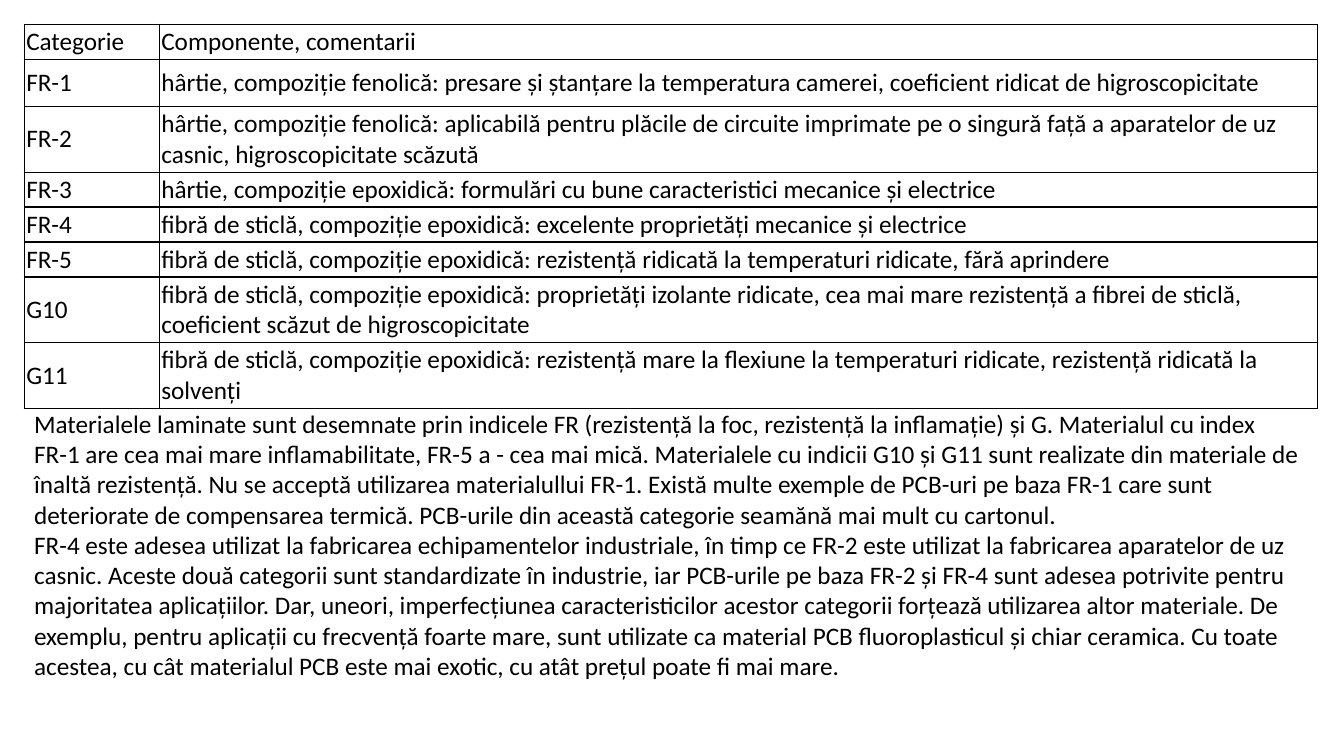
from dataclasses import dataclass

from lxml import etree
from pptx import Presentation
from pptx.dml.color import RGBColor
from pptx.enum import text
from pptx.oxml import ns
from pptx.util import Pt


@dataclass(frozen=True)
class Theme:
    """Colours, font and sizes of the slide."""
    ink: str = "000000"
    font: str = "Calibri"
    body: int = 18
    border: int = 1
    inset: float = 1.5


THEME = Theme()
ONE_LINE, TWO_LINES = 18.72, 33.84
LEFT, TOP, WIDTH = 17.28, 17.28, 923.76
TABLE_HEIGHT, NOTES_HEIGHT = 270.72, 203.76
CATEGORY_WIDTH = 96.48

GRADES = [
    ("Categorie", "Componente, comentarii", ONE_LINE),
    ("FR-1", "hârtie, compoziție fenolică: presare și ștanțare la temperatura camerei, "
     "coeficient ridicat de higroscopicitate", TWO_LINES),
    ("FR-2", "hârtie, compoziție fenolică: aplicabilă pentru plăcile de circuite imprimate "
     "pe o singură față a aparatelor de uz casnic, higroscopicitate scăzută", TWO_LINES),
    ("FR-3", "hârtie, compoziție epoxidică: formulări cu bune caracteristici mecanice "
     "și electrice", ONE_LINE),
    ("FR-4", "fibră de sticlă, compoziție epoxidică: excelente proprietăți mecanice "
     "și electrice", ONE_LINE),
    ("FR-5", "fibră de sticlă, compoziție epoxidică: rezistență ridicată la temperaturi "
     "ridicate, fără aprindere", ONE_LINE),
    ("G10", "fibră de sticlă, compoziție epoxidică: proprietăți izolante ridicate, cea mai "
     "mare rezistență a fibrei de sticlă, coeficient scăzut de higroscopicitate", TWO_LINES),
    ("G11", "fibră de sticlă, compoziție epoxidică: rezistență mare la flexiune la "
     "temperaturi ridicate, rezistență ridicată la solvenți", TWO_LINES),
]

NOTES = [
    "Materialele laminate sunt desemnate prin indicele FR (rezistență la foc, rezistență la "
    "inflamație) și G. Materialul cu index FR-1 are cea mai mare inflamabilitate, FR-5 a - cea "
    "mai mică. Materialele cu indicii G10 și G11 sunt realizate din materiale de înaltă "
    "rezistență. Nu se acceptă utilizarea materialullui FR-1. Există multe exemple de PCB-uri "
    "pe baza FR-1 care sunt deteriorate de compensarea termică. PCB-urile din această "
    "categorie seamănă mai mult cu cartonul.",
    "FR-4 este adesea utilizat la fabricarea echipamentelor industriale, în timp ce FR-2 este "
    "utilizat la fabricarea aparatelor de uz casnic. Aceste două categorii sunt standardizate "
    "în industrie, iar PCB-urile pe baza FR-2 și FR-4 sunt adesea potrivite pentru majoritatea "
    "aplicațiilor. Dar, uneori, imperfecțiunea caracteristicilor acestor categorii forțează "
    "utilizarea altor materiale. De exemplu, pentru aplicații cu frecvență foarte mare, sunt "
    "utilizate ca material PCB fluoroplasticul și chiar ceramica. Cu toate acestea, cu cât "
    "materialul PCB este mai exotic, cu atât prețul poate fi mai mare.",
]


def write(frame, wording):
    """Fill a text frame and give its runs the theme's font."""
    frame.text = wording
    for paragraph in frame.paragraphs:
        for run in paragraph.runs:
            run.font.name = THEME.font
            run.font.size = Pt(THEME.body)
            run.font.color.rgb = RGBColor.from_string(THEME.ink)


def outline(cell):
    """Draw a solid line on all four sides of a cell."""
    properties = cell._tc.get_or_add_tcPr()
    for side in ("lnL", "lnR", "lnT", "lnB"):
        line = etree.SubElement(properties, ns.qn(f"a:{side}"), w=str(Pt(THEME.border)))
        fill = etree.SubElement(line, ns.qn("a:solidFill"))
        etree.SubElement(fill, ns.qn("a:srgbClr"), val=THEME.ink)


def add_grades(slide, left, top, width, height):
    """Place the table of laminate grades in the given box."""
    frame = slide.shapes.add_table(len(GRADES), 2, Pt(left), Pt(top), Pt(width), Pt(height))
    grades = frame.table
    grades.first_row = grades.horz_banding = False
    grades.columns[0].width = Pt(CATEGORY_WIDTH)
    grades.columns[1].width = Pt(width - CATEGORY_WIDTH)
    for row, (category, comment, row_height) in zip(grades.rows, GRADES):
        row.height = Pt(row_height)
        for cell, wording in zip(row.cells, (category, comment)):
            write(cell.text_frame, wording)
            cell.vertical_anchor = text.MSO_ANCHOR.MIDDLE
            cell.margin_left = cell.margin_right = Pt(THEME.inset)
            cell.margin_top = cell.margin_bottom = Pt(THEME.inset)
            outline(cell)
            cell.fill.background()
    frame.height = Pt(height)


def add_notes(slide, left, top, width, height):
    """Place the explanatory paragraphs in the given box."""
    notes = slide.shapes.add_textbox(Pt(left), Pt(top), Pt(width), Pt(height)).text_frame
    notes.word_wrap = True
    notes.auto_size = text.MSO_AUTO_SIZE.SHAPE_TO_FIT_TEXT
    write(notes, "\n".join(NOTES))


def main():
    """Build and save the slide."""
    deck = Presentation()
    deck.slide_width, deck.slide_height = Pt(960), Pt(540)
    slide = deck.slides.add_slide(deck.slide_layouts[6])
    add_grades(slide, LEFT, TOP, WIDTH, TABLE_HEIGHT)
    add_notes(slide, LEFT, TOP + TABLE_HEIGHT, WIDTH, NOTES_HEIGHT)
    deck.save("out.pptx")


if __name__ == "__main__":
    main()
